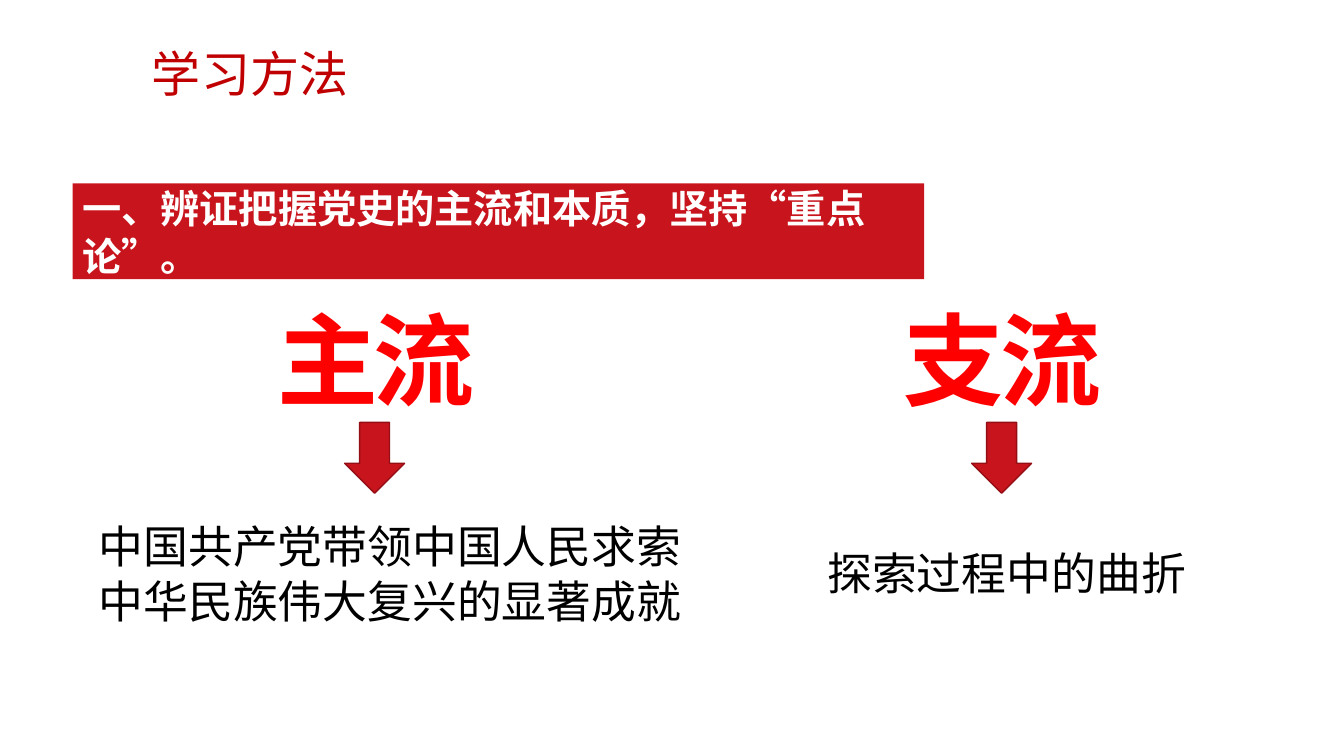
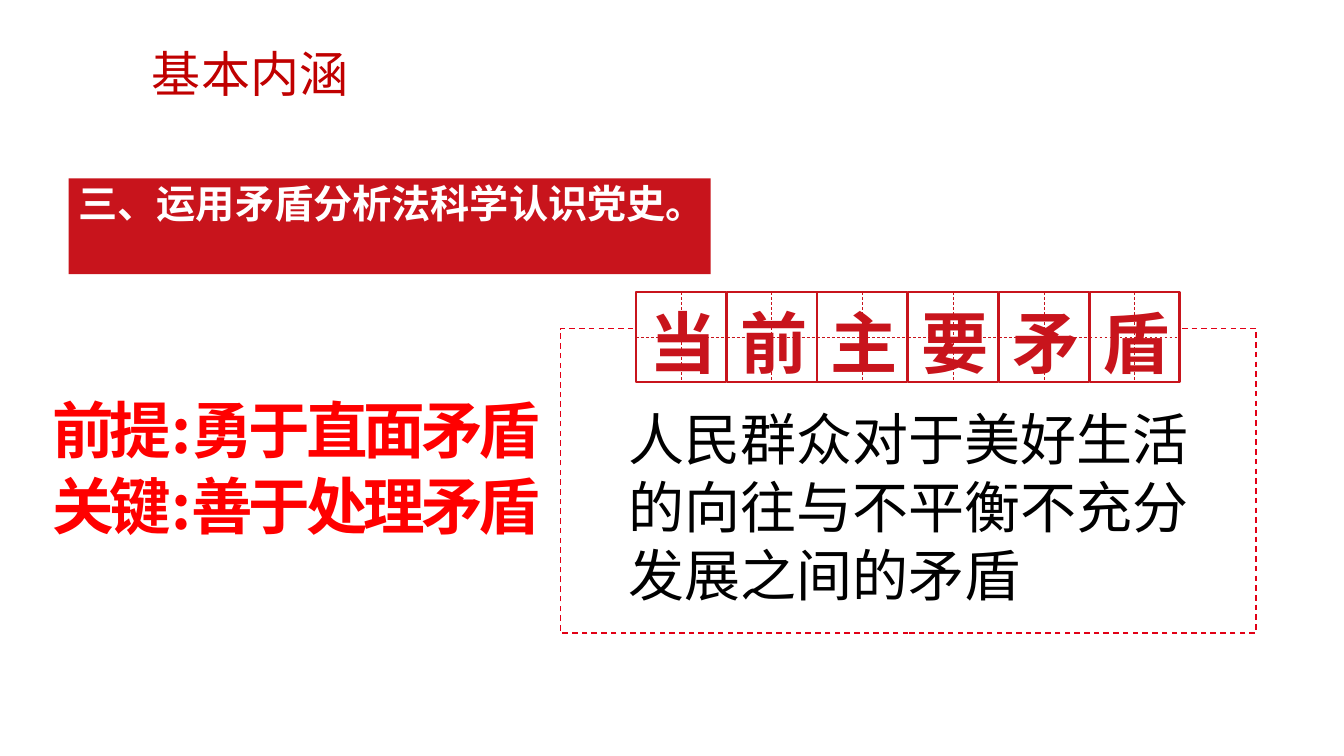
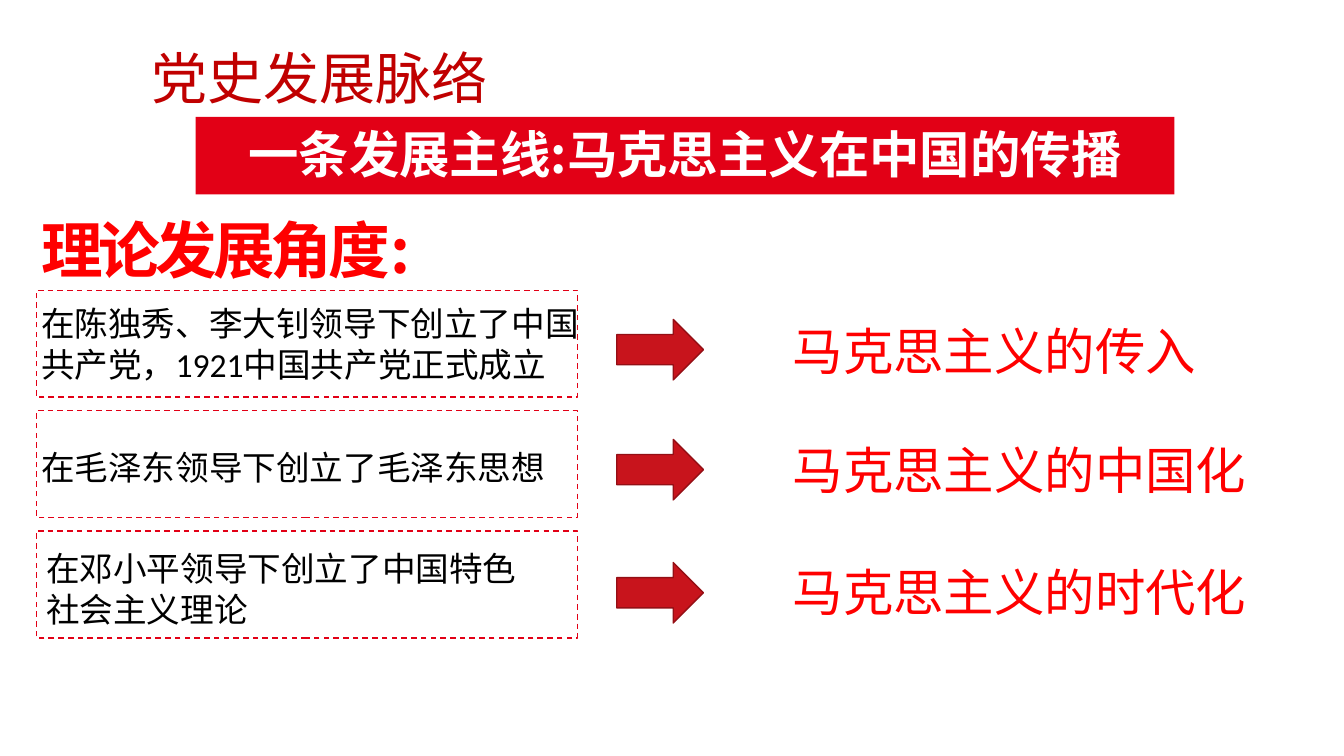
from lxml.etree import SubElement
from pptx import Presentation
from pptx.dml.color import RGBColor
from pptx.enum.dml import MSO_LINE
from pptx.enum.shapes import MSO_CONNECTOR, MSO_SHAPE
from pptx.enum.text import MSO_ANCHOR, PP_ALIGN
from pptx.oxml.ns import qn
from pptx.util import Pt

# Shared look
CALIBRI = "Calibri"
NOTO = "Noto Sans CJK SC"
TITLE_RED = "C00000"
BRAND_RED = "C8141C"
BRIGHT_RED = "E20016"
PURE_RED = "FF0000"
ARROW_EDGE = "940F15"
WHITE = "FFFFFF"
BLACK = "000000"
LINE_FACTOR = 1.22


def color(hex_code):
    return RGBColor.from_string(hex_code)


# Text
def write(shape, lines, size, ink, font=CALIBRI, bold=False, tracking=0,
          align=PP_ALIGN.LEFT, inset_x=7.2, inset_y=3.6):
    frame = shape.text_frame
    frame.word_wrap = True
    frame.vertical_anchor = MSO_ANCHOR.TOP
    frame.margin_left = frame.margin_right = Pt(inset_x)
    frame.margin_top = frame.margin_bottom = Pt(inset_y)
    for index, line in enumerate(lines):
        para = frame.add_paragraph() if index else frame.paragraphs[0]
        para.alignment = align
        para.line_spacing = Pt(round(size * LINE_FACTOR, 1))
        span = para.add_run()
        span.text = line
        span.font.size = Pt(size)
        span.font.bold = bold
        span.font.name = font
        span.font.color.rgb = color(ink)
        properties = span.font._element
        latin = properties.find(qn("a:latin"))
        east_asian = SubElement(properties, qn("a:ea"), typeface=NOTO)
        latin.addnext(east_asian)
        if tracking:
            properties.set("spc", str(tracking * 100))


def add_text(page, left, top, width, height, lines, size, ink=BLACK, **style):
    box = page.shapes.add_textbox(Pt(left), Pt(top), Pt(width), Pt(height))
    write(box, lines, size, ink, **style)


def add_title(page, text, size=35):
    add_text(page, 101.5, 26.6, 280, 52, [text], size, TITLE_RED, font=NOTO)


def add_headline(page, left, top, width, height, lines, size):
    add_text(page, left, top, width, height, lines, size, PURE_RED,
             font=NOTO, bold=True, tracking=-3)


# Shapes
def add_block(page, kind, left, top, width, height, fill=None, edge=None,
              weight=1, dashed=False):
    shape = page.shapes.add_shape(kind, Pt(left), Pt(top), Pt(width), Pt(height))
    shape.shadow.inherit = False
    if fill:
        shape.fill.solid()
        shape.fill.fore_color.rgb = color(fill)
    else:
        shape.fill.background()
    if edge:
        shape.line.color.rgb = color(edge)
        shape.line.width = Pt(weight)
    else:
        shape.line.fill.background()
    if dashed:
        shape.line.dash_style = MSO_LINE.DASH
    return shape


def add_banner(page, left, top, width, height, text, size, fill=BRAND_RED, **style):
    banner = add_block(page, MSO_SHAPE.RECTANGLE, left, top, width, height, fill)
    write(banner, [text], size, WHITE, bold=True, **style)


def add_arrow(page, kind, left, top, width, height):
    add_block(page, kind, left, top, width, height, BRAND_RED, ARROW_EDGE)


def add_dashed_frame(page, left, top, width, height):
    add_block(page, MSO_SHAPE.RECTANGLE, left, top, width, height,
              edge=BRIGHT_RED, dashed=True)


def add_guide(page, start_x, start_y, end_x, end_y):
    guide = page.shapes.add_connector(MSO_CONNECTOR.STRAIGHT, Pt(start_x),
                                      Pt(start_y), Pt(end_x), Pt(end_y))
    guide.line.color.rgb = color(BRAND_RED)
    guide.line.width = Pt(0.5)
    guide.line.dash_style = MSO_LINE.DASH
    SubElement(guide._element.spPr, qn("a:effectLst"))


def add_character_cell(page, left, top, side, character):
    """Square with dashed centre lines, as used for handwriting practice."""
    add_block(page, MSO_SHAPE.RECTANGLE, left, top, side, side, WHITE,
              BRAND_RED, weight=1.5)
    middle = side / 2
    add_guide(page, left + middle, top, left + middle, top + side)
    add_guide(page, left, top + middle, left + side, top + middle)
    add_text(page, left + 1.4, top + 2.2, side, side, [character], 48, BRAND_RED,
             font=NOTO, bold=True, align=PP_ALIGN.CENTER, inset_x=0)


# Slides
def build_method_page(page):
    add_title(page, "学习方法")
    add_banner(page, 51.8, 131, 608.4, 68.4,
               "一、辨证把握党史的主流和本质，坚持“重点论”。", 28, inset_y=0)
    for headline_left, arrow_left, word in ((190.8, 246.2, "主流"),
                                            (638.6, 694.1, "支流")):
        add_headline(page, headline_left, 207.4, 240, 94, [word], 72)
        add_arrow(page, MSO_SHAPE.DOWN_ARROW, arrow_left, 301.7, 42.8, 50.6)
    add_text(page, 63.4, 366.5, 435, 85,
             ["中国共产党带领中国人民求索", "中华民族伟大复兴的显著成就"], 32)
    add_text(page, 583.9, 385.9, 300, 46, ["探索过程中的曲折"], 32)


def build_meaning_page(page):
    add_title(page, "基本内涵")
    add_banner(page, 49, 127.4, 458.6, 68.4,
               "三、运用矛盾分析法科学认识党史。", 28, inset_y=0)
    add_headline(page, 30.2, 275.8, 440, 114,
                 ["前提:勇于直面矛盾", "关键:善于处理矛盾"], 44)
    add_dashed_frame(page, 400.3, 234.7, 496.8, 217.4)
    for index, character in enumerate("当前主要矛盾"):
        add_character_cell(page, 454.3 + 64.8 * index, 208.8, 64.3, character)
    add_text(page, 442.1, 284.4, 458.6, 152.6,
             ["人民群众对于美好生活", "的向往与不平衡不充分", "发展之间的矛盾"], 40)


def build_history_page(page):
    add_title(page, "党史发展脉络", 40)
    add_banner(page, 139.7, 83.5, 699.1, 55.4,
               "一条发展主线:马克思主义在中国的传播", 36, BRIGHT_RED,
               font=NOTO, align=PP_ALIGN.CENTER)
    add_headline(page, 22.3, 146.9, 440, 60, ["理论发展角度:"], 44)
    # Each stage: text position and lines, arrow top, outcome top and wording
    stages = (
        (22.3, 212.4, 420, ["在陈独秀、李大钊领导下创立了中国",
                            "共产党，1921中国共产党正式成立"],
         228.2, 224.6, "马克思主义的传入"),
        (22.3, 315.4, 420, ["在毛泽东领导下创立了毛泽东思想"],
         313.9, 309.6, "马克思主义的中国化"),
        (25.9, 387.4, 352, ["在邓小平领导下创立了中国特色社会主义理论"],
         401.8, 396.7, "马克思主义的时代化"),
    )
    for index, stage in enumerate(stages):
        left, top, width, lines, arrow_top, outcome_top, outcome = stage
        add_dashed_frame(page, 25.9, 207.4 + 86 * index, 386.6, 76.3)
        add_text(page, left, top, width, 66, lines, 24)
        add_arrow(page, MSO_SHAPE.RIGHT_ARROW, 440.6, arrow_top, 61.9, 43.2)
        add_text(page, 559.2, outcome_top, 360, 51, [outcome], 36, PURE_RED)


def main():
    deck = Presentation()
    deck.slide_width, deck.slide_height = Pt(960), Pt(540)
    for build in (build_method_page, build_meaning_page, build_history_page):
        build(deck.slides.add_slide(deck.slide_layouts[6]))
    deck.save("out.pptx")


if __name__ == "__main__":
    main()
